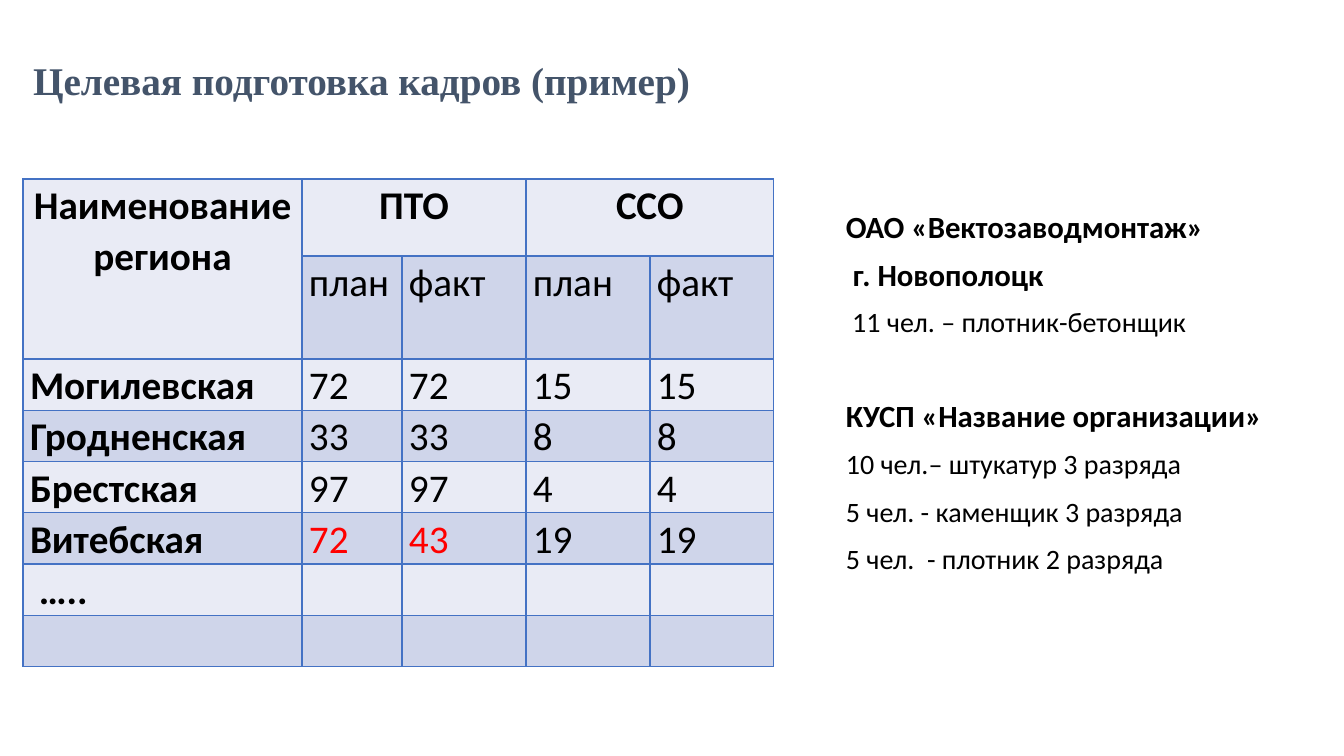
from lxml.etree import SubElement
from pptx import Presentation
from pptx.dml.color import RGBColor
from pptx.enum.text import MSO_ANCHOR as Anchor, PP_ALIGN as Align
from pptx.oxml.ns import qn
from pptx.util import Emu, Pt


def px(length):
    return Emu(round(length * 914400 / 100.8))


def add_run(paragraph, text, size, color="000000", bold=False, font="Calibri"):
    run = paragraph.add_run()
    run.text = text
    run.font.name = font
    run.font.size = Pt(size)
    run.font.bold = bold
    run.font.color.rgb = RGBColor.from_string(color)


presentation = Presentation()
presentation.slide_width = px(1344)
presentation.slide_height = px(756)
slide = presentation.slides.add_slide(presentation.slide_layouts[5])

title = slide.shapes.title
title.left, title.top, title.width, title.height = px(23), px(10), px(1159), px(146)
title.text_frame.vertical_anchor = Anchor.MIDDLE
title.text_frame.word_wrap = True
paragraph = title.text_frame.paragraphs[0]
paragraph.alignment = Align.LEFT
paragraph.line_spacing = 0.9
add_run(paragraph, "Целевая подготовка кадров (пример)", 28, "44546A", True, "Times New Roman")

rows = [
    ["Наименование региона", "ПТО", "", "ССО", ""],
    ["", "план", "факт", "план", "факт"],
    ["Могилевская", "72", "72", "15", "15"],
    ["Гродненская", "33", "33", "8", "8"],
    ["Брестская", "97", "97", "4", "4"],
    ["Витебская", "72", "43", "19", "19"],
    [" …..", "", "", "", ""],
    ["", "", "", "", ""],
]
column_widths = [279, 100, 124, 124, 124]
row_heights = [77, 103] + [51] * 6
red_cells = {(5, 1), (5, 2)}

table = slide.shapes.add_table(
    len(rows), len(column_widths), px(23), px(179), px(sum(column_widths)), px(sum(row_heights))
).table
for column, width in zip(table.columns, column_widths):
    column.width = px(width)
for row, height in zip(table.rows, row_heights):
    row.height = px(height)
table.cell(0, 0).merge(table.cell(1, 0))
table.cell(0, 1).merge(table.cell(0, 2))
table.cell(0, 3).merge(table.cell(0, 4))

for row_index, row in enumerate(rows):
    for column_index, text in enumerate(row):
        cell = table.cell(row_index, column_index)
        cell.margin_left = cell.margin_right = px(7)
        cell.margin_top = cell.margin_bottom = 0
        properties = cell._tc.get_or_add_tcPr()
        for side in ("a:lnL", "a:lnR", "a:lnT", "a:lnB"):
            border = SubElement(properties, qn(side), w=str(Pt(1)))
            SubElement(SubElement(border, qn("a:solidFill")), qn("a:srgbClr"), val="4472C4")
        cell.fill.solid()
        cell.fill.fore_color.rgb = RGBColor.from_string("CFD5EA" if row_index % 2 else "E9EBF5")
        if text:
            paragraph = cell.text_frame.paragraphs[0]
            paragraph.alignment = Align.LEFT if row_index else Align.CENTER
            paragraph.line_spacing = 1.07
            paragraph.space_after = Pt(8)
            color = "FF0000" if (row_index, column_index) in red_cells else "000000"
            add_run(paragraph, text, 28, color, row_index == 0 or column_index == 0)

orders = [
    ("ОАО «Вектозаводмонтаж»", True, 1, 0),
    (" г. Новополоцк", True, 1, 0),
    (" 11 чел. – плотник-бетонщик", False, 1, 0),
    ("КУСП «Название организации»", True, 1.07, 32),
    ("10 чел.– штукатур 3 разряда", False, 1.07, 0),
    ("5 чел. - каменщик 3 разряда", False, 1.07, 0),
    ("5 чел.  - плотник 2 разряда", False, 1.07, 0),
]
orders_frame = slide.shapes.add_textbox(px(836), px(203), px(446), px(381)).text_frame
orders_frame.word_wrap = True
for index, (text, bold, line_spacing, space_before) in enumerate(orders):
    paragraph = orders_frame.add_paragraph() if index else orders_frame.paragraphs[0]
    paragraph.line_spacing = line_spacing
    paragraph.space_before = Pt(space_before)
    paragraph.space_after = Pt(8)
    add_run(paragraph, text, 22 if bold else 20, bold=bold)

presentation.save("out.pptx")
